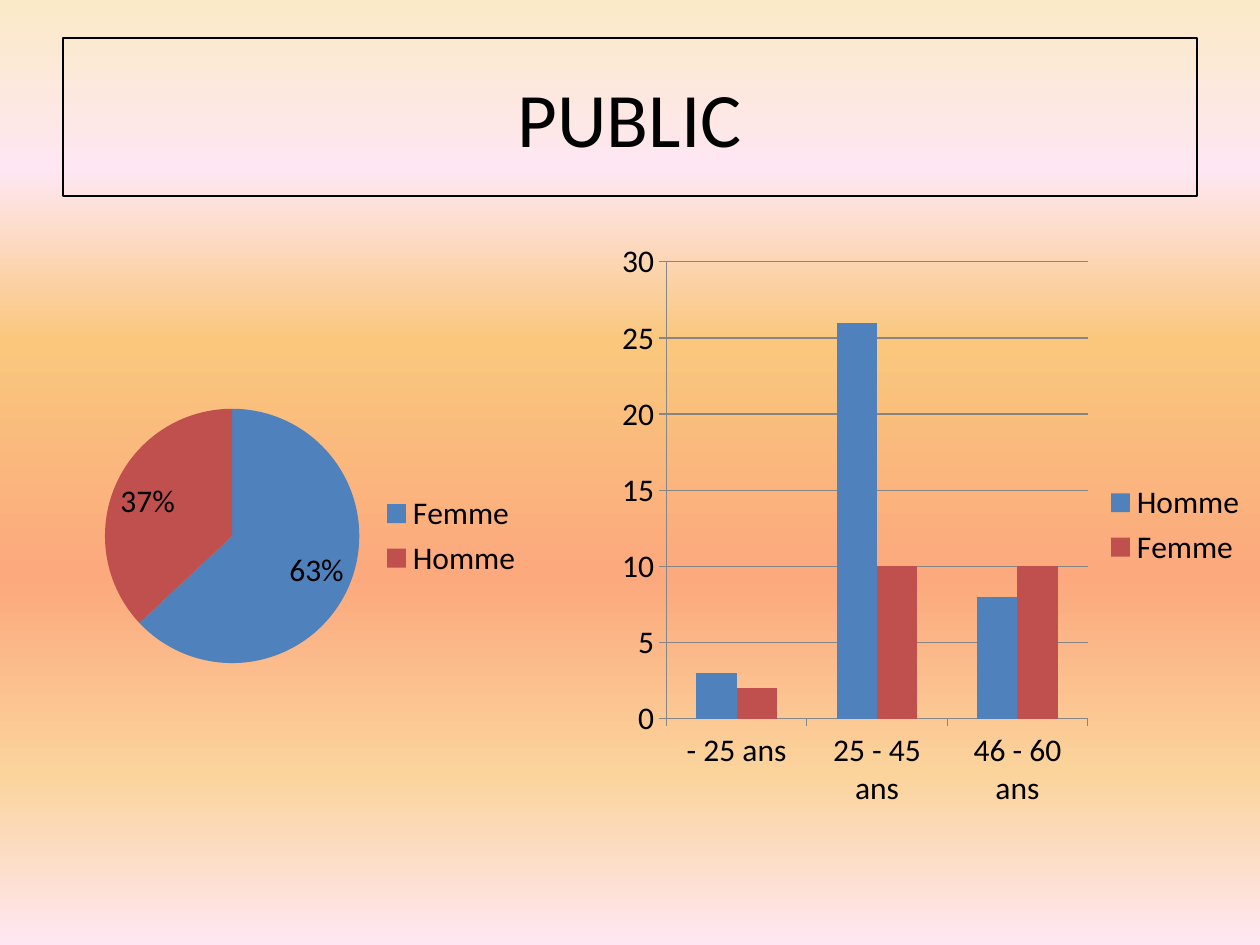
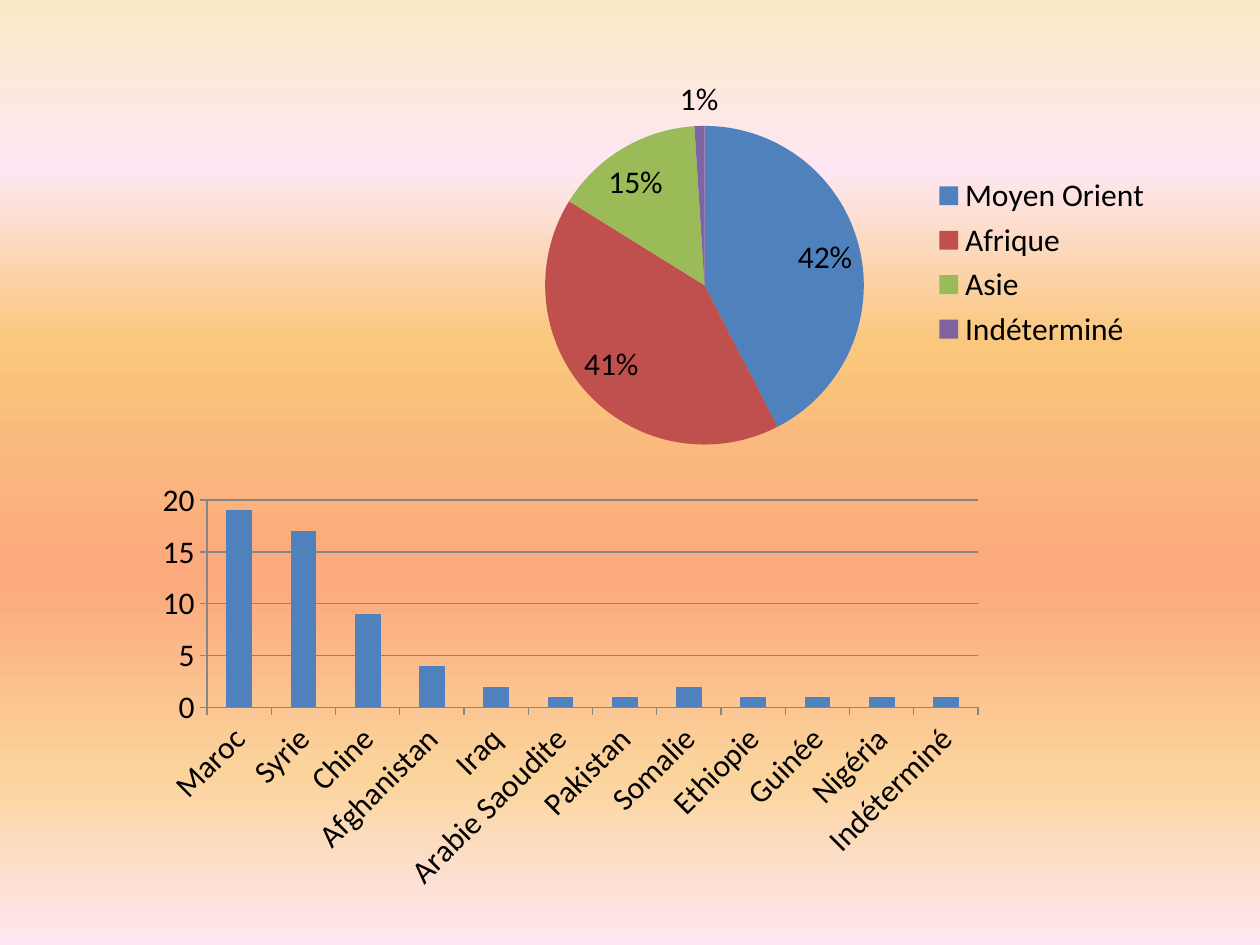
from lxml import etree
from pptx import Presentation
from pptx.chart.data import CategoryChartData
from pptx.dml.color import RGBColor
from pptx.enum.chart import XL_CHART_TYPE, XL_LABEL_POSITION, XL_LEGEND_POSITION, XL_TICK_MARK
from pptx.enum.shapes import MSO_SHAPE
from pptx.enum.text import MSO_ANCHOR, PP_ALIGN
from pptx.oxml.ns import qn
from pptx.util import Emu, Pt

PIE, COLUMNS = XL_CHART_TYPE.PIE, XL_CHART_TYPE.COLUMN_CLUSTERED
BEST_FIT = XL_LABEL_POSITION.BEST_FIT
LEGEND_RIGHT = XL_LEGEND_POSITION.RIGHT
TICK_OUT = XL_TICK_MARK.OUTSIDE
RECTANGLE = MSO_SHAPE.RECTANGLE
MIDDLE, CENTER = MSO_ANCHOR.MIDDLE, PP_ALIGN.CENTER

FONT = "Calibri"
COLORS = {
    "text": "000000", "axis": "868686",
    "blue": "4F81BD", "red": "C0504D", "green": "9BBB59", "purple": "8064A2",
    "cream": "FBEAC7", "pink": "FEE7F2", "gold": "FAC77D",
    "coral": "FBA97D", "sand": "FBD49C",
}
SERIES_COLORS = ["blue", "red", "green", "purple"]
# Background stops: percent and colour, from top to bottom
SUNSET = [(0, "cream"), (18, "pink"), (36, "gold"), (61, "coral"), (82, "sand"), (100, "pink")]


def px(length):
    return Emu(round(length * 914400 / 126))


def rgb(name):
    return RGBColor.from_string(COLORS[name])


def style_font(font, size):
    font.name = FONT
    font.size = Pt(size)
    font.color.rgb = rgb("text")


def paint(fill, color):
    fill.solid()
    fill.fore_color.rgb = rgb(color)


def add_page(deck):
    """Add a blank slide with the sunset gradient."""
    page = deck.slides.add_slide(deck.slide_layouts[6])
    fill = page.background.fill
    fill.gradient()
    fill.gradient_angle = 270
    stops = page.element.find(".//" + qn("a:gsLst"))
    for stop in list(stops):
        stops.remove(stop)
    for percent, color in SUNSET:
        stop = etree.SubElement(stops, qn("a:gs"), pos=str(percent * 1000))
        etree.SubElement(stop, qn("a:srgbClr"), val=COLORS[color])
    return page


def add_title(page, text):
    box = page.shapes.add_shape(RECTANGLE, px(63), px(38), px(1134), px(158))
    box.shadow.inherit = False
    box.fill.background()
    box.line.color.rgb = rgb("text")
    box.line.width = Pt(0.75)
    frame = box.text_frame
    frame.text = text
    frame.vertical_anchor = MIDDLE
    para = frame.paragraphs[0]
    para.alignment = CENTER
    style_font(para.runs[0].font, 44)


def add_chart(page, kind, area, categories, series, legend=True):
    data = CategoryChartData()
    data.categories = categories
    for name, values in series.items():
        data.add_series(name, values)
    chart = page.shapes.add_chart(kind, *map(px, area), data).chart
    style_font(chart.font, 18)
    chart.has_title = False
    chart.has_legend = legend
    if legend:
        chart.legend.position = LEGEND_RIGHT
        chart.legend.include_in_layout = False
    return chart


def add_pie(page, area, shares):
    chart = add_chart(page, PIE, area, list(shares), {"Series 1": list(shares.values())})
    plot = chart.plots[0]
    for index, color in enumerate(SERIES_COLORS[:len(shares)]):
        paint(plot.series[0].points[index].format.fill, color)
    plot.has_data_labels = True
    labels = plot.data_labels
    labels.show_value = True
    labels.number_format = "0%"
    labels.number_format_is_linked = False
    labels.position = BEST_FIT
    style_font(labels.font, 18)


def add_columns(page, area, categories, series, top, legend=True):
    chart = add_chart(page, COLUMNS, area, categories, series, legend)
    plot = chart.plots[0]
    plot.vary_by_categories = False
    plot.gap_width = 150
    for column, color in zip(plot.series, SERIES_COLORS):
        paint(column.format.fill, color)
    scale = chart.value_axis
    scale.minimum_scale, scale.maximum_scale, scale.major_unit = 0, top, 5
    scale.has_major_gridlines = True
    scale.tick_labels.number_format = "0"
    scale.tick_labels.number_format_is_linked = False
    for line in (scale.format.line, chart.category_axis.format.line,
                 scale.major_gridlines.format.line):
        line.color.rgb = rgb("axis")
        line.width = Pt(0.75)
    for axis in (scale, chart.category_axis):
        axis.major_tick_mark = TICK_OUT
        style_font(axis.tick_labels.font, 18)
    return chart


def slant_labels(axis):
    body = axis.tick_labels.font and axis._element.find(qn("c:txPr")).find(qn("a:bodyPr"))
    body.set("rot", "-2700000")
    body.set("vert", "horz")


def place_plot(chart, x, y, w, h):
    """Fix the inner plot area, in fractions of the chart."""
    plot_area = chart._chartSpace.chart.plotArea
    for old in plot_area.findall(qn("c:layout")):
        plot_area.remove(old)
    layout = etree.Element(qn("c:layout"))
    plot_area.insert(0, layout)
    manual = etree.SubElement(layout, qn("c:manualLayout"))
    settings = {"layoutTarget": "inner", "xMode": "edge", "yMode": "edge",
                "x": x, "y": y, "w": w, "h": h}
    for tag, value in settings.items():
        etree.SubElement(manual, qn("c:" + tag), val=str(value))


def main():
    deck = Presentation()
    deck.slide_width, deck.slide_height = px(1260), px(945)

    # Public: gender and age
    page = add_page(deck)
    add_title(page, "PUBLIC")
    add_pie(page, (32, 242, 504, 588), {"Femme": 0.63, "Homme": 0.37})
    add_columns(page, (609, 231, 651, 588), ["- 25 ans", "25 - 45 ans", "46 - 60 ans"],
                {"Homme": [3, 26, 8], "Femme": [2, 10, 10]}, top=30)

    # Origins: regions and countries
    page = add_page(deck)
    add_pie(page, (462, 63, 703, 399),
            {"Moyen Orient": 0.42, "Afrique": 0.41, "Asie": 0.15, "Indéterminé": 0.01})
    countries = {
        "Maroc": 19, "Syrie": 17, "Chine": 9, "Afghanistan": 4, "Iraq": 2,
        "Arabie Saoudite": 1, "Pakistan": 1, "Somalie": 2, "Ethiopie": 1,
        "Guinée": 1, "Nigéria": 1, "Indéterminé": 1,
    }
    chart = add_columns(page, (105, 431, 1134, 494), list(countries),
                        {"Series 1": list(countries.values())}, top=20, legend=False)
    slant_labels(chart.category_axis)
    place_plot(chart, 0.09, 0.14, 0.68, 0.42)

    deck.save("out.pptx")


if __name__ == "__main__":
    main()
